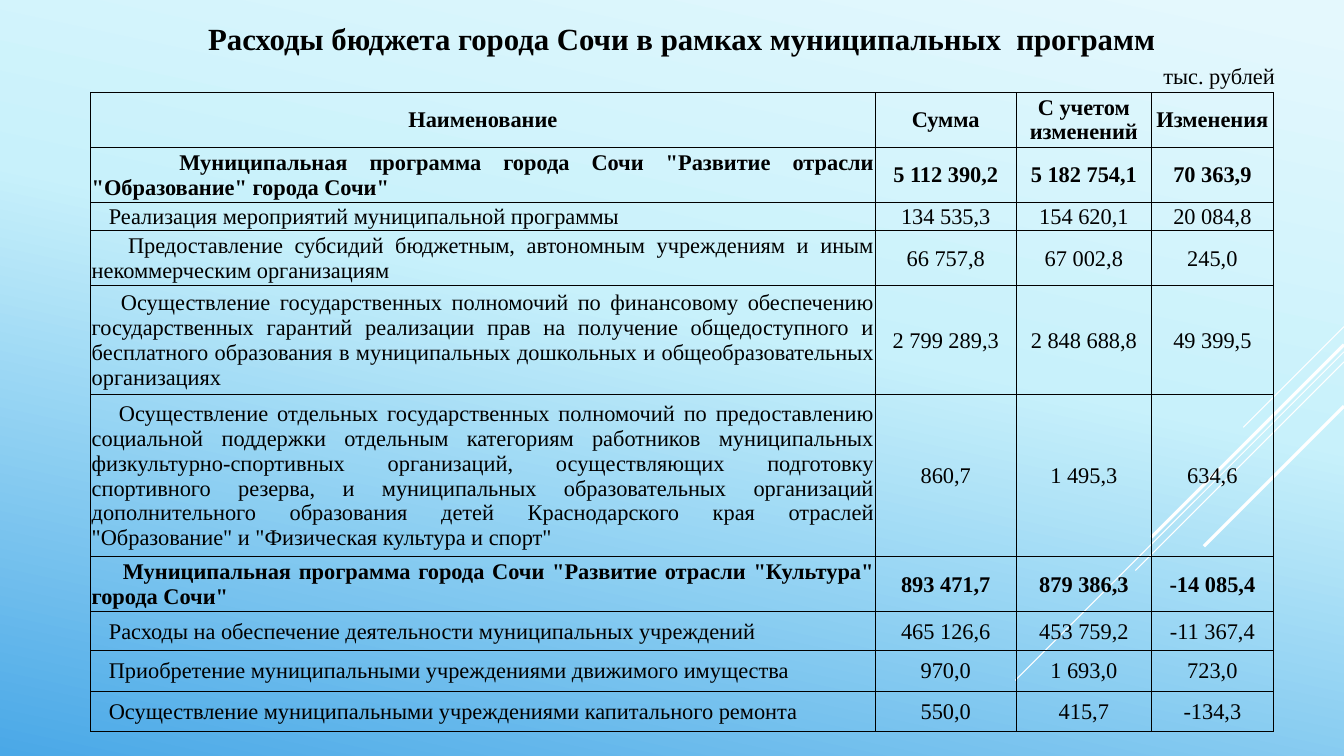
from copy import deepcopy

from lxml.etree import SubElement
from pptx import Presentation
from pptx.dml.color import RGBColor
from pptx.enum.shapes import MSO_CONNECTOR
from pptx.enum.text import MSO_ANCHOR as Anchor, PP_ALIGN as Align
from pptx.oxml import parse_xml
from pptx.oxml.ns import nsdecls, qn
from pptx.util import Inches, Pt

BLACK = RGBColor(0x00, 0x00, 0x00)
WHITE = RGBColor(0xFF, 0xFF, 0xFF)
SKY = [(0.02, RGBColor(0xE4, 0xF8, 0xFD)),
       (0.43, RGBColor(0xC8, 0xF1, 0xFB)),
       (1.0, RGBColor(0x4A, 0xA8, 0xE7))]
FONT = "Times New Roman"
SLIDE_W, SLIDE_H = 13.33, 7.5

# Diagonal rays from the right edge: start y, horizontal run, width in points
RAYS = [(3.24, 1.0, 0.75), (3.49, 3.26, 0.75), (3.59, 2.07, 0.75),
        (3.42, 1.91, 2.25), (4.03, 1.39, 2.25)]

COLUMN_WIDTHS = [7.78, 1.4, 1.34, 1.21]
HEADINGS = ["Наименование", "Сумма", "С учетом изменений", "Изменения"]

# Row height, first-line indent, bold, name, sums
PROGRAMS = [
    (0.55, 0.87, True,
     'Муниципальная программа города Сочи "Развитие отрасли "Образование" города Сочи"',
     ["5 112 390,2", "5 182 754,1", "70 363,9"]),
    (0.28, 0.17, False, "Реализация мероприятий муниципальной программы",
     ["134 535,3", "154 620,1", "20 084,8"]),
    (0.54, 0.36, False,
     "Предоставление субсидий бюджетным, автономным учреждениям и иным "
     "некоммерческим организациям",
     ["66 757,8", "67 002,8", "245,0"]),
    (1.08, 0.29, False,
     "Осуществление государственных полномочий по финансовому обеспечению "
     "государственных гарантий реализации прав на получение общедоступного и "
     "бесплатного образования в муниципальных дошкольных и общеобразовательных "
     "организациях",
     ["2 799 289,3", "2 848 688,8", "49 399,5"]),
    (1.61, 0.27, False,
     "Осуществление отдельных государственных полномочий по предоставлению "
     "социальной поддержки отдельным категориям работников муниципальных "
     "физкультурно-спортивных организаций, осуществляющих подготовку спортивного "
     "резерва, и муниципальных образовательных организаций дополнительного "
     "образования детей Краснодарского края отраслей "
     '"Образование" и "Физическая культура и спорт"',
     ["860,7", "1 495,3", "634,6"]),
    (0.54, 0.31, True,
     'Муниципальная программа города Сочи "Развитие отрасли "Культура" города Сочи"',
     ["893 471,7", "879 386,3", "-14 085,4"]),
    (0.39, 0.17, False, "Расходы на обеспечение деятельности муниципальных учреждений",
     ["465 126,6", "453 759,2", "-11 367,4"]),
    (0.4, 0.17, False, "Приобретение муниципальными учреждениями движимого имущества",
     ["970,0", "1 693,0", "723,0"]),
    (0.4, 0.17, False, "Осуществление муниципальными учреждениями капитального ремонта",
     ["550,0", "415,7", "-134,3"]),
]


def write(frame, text, size=16, bold=False, align=Align.CENTER, indent=0):
    frame.word_wrap = True
    paragraph = frame.paragraphs[0]
    paragraph.alignment = align
    if indent:
        properties = paragraph._p.get_or_add_pPr()
        properties.set("marL", "0")
        properties.set("indent", str(Inches(indent)))
    run = paragraph.add_run()
    run.text = text
    run.font.name = FONT
    run.font.size = Pt(size)
    run.font.bold = bold
    run.font.color.rgb = BLACK


def paint_background(slide):
    fill = slide.background.fill
    fill.gradient()
    fill.gradient_angle = 258
    stops = slide._element.find(".//" + qn("a:gsLst"))
    stops.append(deepcopy(stops[-1]))
    for stop, (position, color) in zip(fill.gradient_stops, SKY):
        stop.position = position
        stop.color.rgb = color


def draw_rays(slide, right):
    for top, run, width in RAYS:
        ray = slide.shapes.add_connector(
            MSO_CONNECTOR.STRAIGHT, Inches(right), Inches(top),
            Inches(right - run), Inches(top + run))
        ray.line.color.rgb = WHITE
        ray.line.width = Pt(width)
        SubElement(ray._element.spPr, qn("a:effectLst"))


def add_heading(slide, left, top, width, height):
    title = slide.shapes.title
    title.left, title.top = Inches(left), Inches(top)
    title.width, title.height = Inches(width), Inches(height)
    title.text_frame.vertical_anchor = Anchor.TOP
    write(title.text_frame, "Расходы бюджета города Сочи в рамках муниципальных  программ",
          size=22, bold=True)


def add_unit(slide, left, top, width, height):
    unit = slide.shapes.add_textbox(Inches(left), Inches(top), Inches(width), Inches(height))
    write(unit.text_frame, "тыс. рублей", align=Align.LEFT)


def format_cell(cell, inset):
    cell.vertical_anchor = Anchor.MIDDLE
    cell.margin_left = cell.margin_right = cell.margin_top = Inches(inset)
    cell.margin_bottom = 0
    cell.fill.background()
    properties = cell._tc.get_or_add_tcPr()
    for place, side in enumerate(["lnL", "lnR", "lnT", "lnB"]):
        properties.insert(place, parse_xml(
            f'<a:{side} {nsdecls("a")} w="{Pt(0.5)}"><a:solidFill>'
            f'<a:srgbClr val="{BLACK}"/></a:solidFill></a:{side}>'))


def add_budget_table(slide, left, top):
    heights = [0.54] + [program[0] for program in PROGRAMS]
    table = slide.shapes.add_table(
        len(heights), len(COLUMN_WIDTHS), Inches(left), Inches(top),
        Inches(sum(COLUMN_WIDTHS)), Inches(sum(heights))).table
    table.first_row = table.horz_banding = False
    for column, width in zip(table.columns, COLUMN_WIDTHS):
        column.width = Inches(width)
    for row, height in zip(table.rows, heights):
        row.height = Inches(height)

    # Header row
    for cell, heading in zip(table.rows[0].cells, HEADINGS):
        format_cell(cell, 0)
        write(cell.text_frame, heading, bold=True)

    # Programs and their sums
    for number, (_, indent, bold, name, sums) in enumerate(PROGRAMS, 1):
        for column, text in enumerate([name] + sums):
            cell = table.cell(number, column)
            format_cell(cell, 0.01)
            if column == 0:
                write(cell.text_frame, text, bold=bold, align=Align.JUSTIFY, indent=indent)
            else:
                write(cell.text_frame, text, bold=bold)


def main():
    deck = Presentation()
    deck.slide_width, deck.slide_height = Inches(SLIDE_W), Inches(SLIDE_H)
    slide = deck.slides.add_slide(deck.slide_layouts[5])
    paint_background(slide)
    draw_rays(slide, SLIDE_W)
    add_heading(slide, 1.95, 0.15, 9.62, 0.47)
    add_unit(slide, 11.44, 0.57, 1.51, 0.37)
    add_budget_table(slide, 0.9, 0.92)
    deck.save("out.pptx")


if __name__ == "__main__":
    main()
